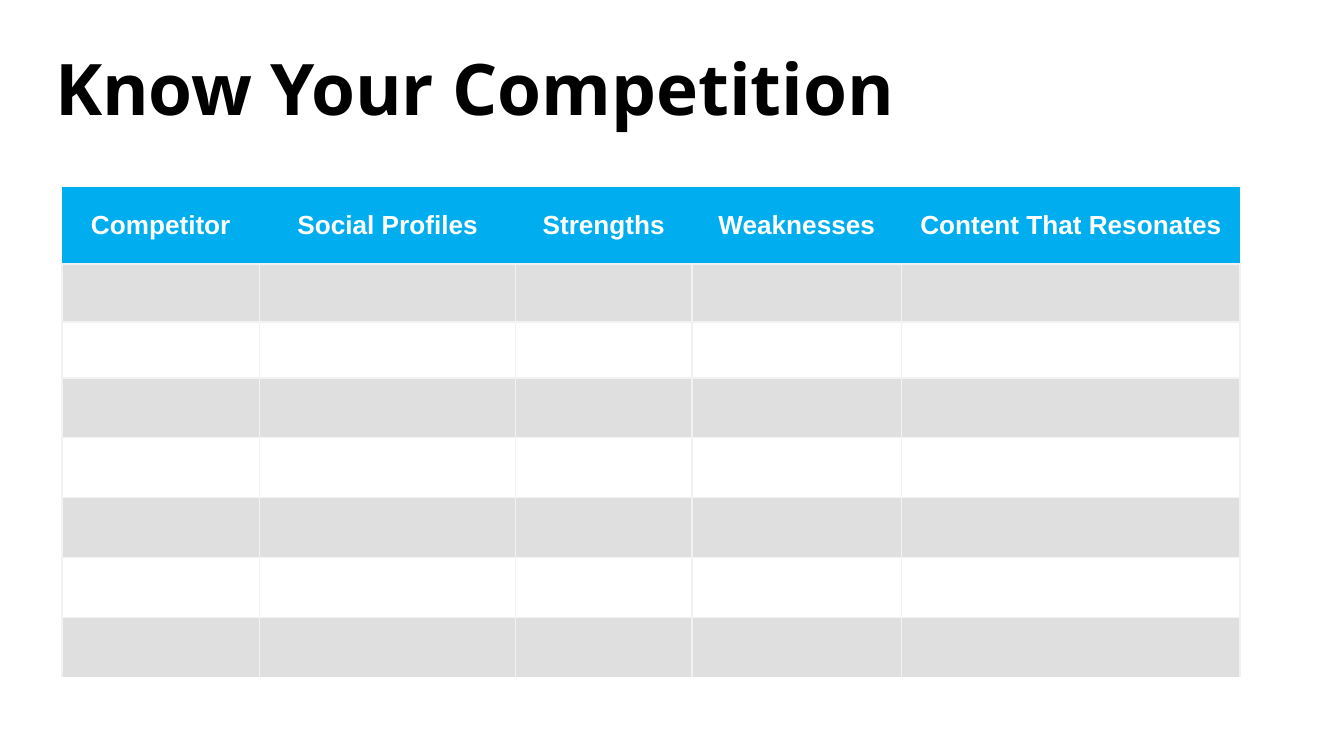
from lxml import etree
from pptx import Presentation
from pptx.dml.color import RGBColor
from pptx.enum.text import MSO_ANCHOR, PP_ALIGN
from pptx.oxml.ns import qn
from pptx.util import Pt

MIDDLE = MSO_ANCHOR.MIDDLE
LEFT = PP_ALIGN.LEFT
CENTER = PP_ALIGN.CENTER

HEADERS = ["Competitor", "Social Profiles", "Strengths", "Weaknesses", "Content That Resonates"]
COLUMN_WIDTHS = [105.9, 137.2, 94.4, 112.4, 181.4]
ROW_HEIGHTS = [41.2, 31, 30] + [32.1] * 5
BLUE, GRAY, WHITE, BORDER = "00AEEF", "DFDFDF", "FFFFFF", "F2F2F2"


def color(value):
    return RGBColor.from_string(value)


def write(frame, text, font="Arial", size=14, fill=WHITE, align=CENTER, spacing=None):
    para = frame.paragraphs[0]
    para.alignment = align
    para.line_spacing = spacing
    span = para.add_run()
    span.text = text
    span.font.name = font
    span.font.size = Pt(size)
    span.font.bold = True
    span.font.color.rgb = color(fill)


deck = Presentation()
deck.slide_width = Pt(720)
deck.slide_height = Pt(405)
page = deck.slides.add_slide(deck.slide_layouts[6])

title = page.shapes.add_textbox(Pt(29.5), Pt(26), Pt(664.5), Pt(47))
frame = title.text_frame
frame.word_wrap = True
frame.vertical_anchor = MIDDLE
frame.margin_left = frame.margin_right = frame.margin_top = frame.margin_bottom = 0
write(frame, "Know Your Competition", font="Open Sans", size=38.1, fill="000000", align=LEFT, spacing=0.9)

table = page.shapes.add_table(
    len(ROW_HEIGHTS), len(HEADERS), Pt(33.2), Pt(100.2), Pt(sum(COLUMN_WIDTHS)), Pt(sum(ROW_HEIGHTS))
).table
table.first_row = False
table.horz_banding = False
for column, width in zip(table.columns, COLUMN_WIDTHS):
    column.width = Pt(width)

last_row = len(ROW_HEIGHTS) - 1
for row_index, height in enumerate(ROW_HEIGHTS):
    row = table.rows[row_index]
    row.height = Pt(height)
    sides = {0: "B", last_row: "LRT"}.get(row_index, "LRTB")
    row_fill = BLUE if row_index == 0 else GRAY if row_index % 2 else WHITE
    for column_index, cell in enumerate(row.cells):
        cell.margin_left = cell.margin_right = cell.margin_top = cell.margin_bottom = Pt(3.6)
        cell.vertical_anchor = MIDDLE
        if row_index == 0:
            write(cell.text_frame, HEADERS[column_index])
        properties = cell._tc.get_or_add_tcPr()
        for side in "LRTB":
            line = etree.SubElement(properties, qn("a:ln" + side), w=str(Pt(1)))
            if side in sides:
                solid = etree.SubElement(line, qn("a:solidFill"))
                etree.SubElement(solid, qn("a:srgbClr"), val=BORDER)
            else:
                etree.SubElement(line, qn("a:noFill"))
        cell.fill.solid()
        cell.fill.fore_color.rgb = color(row_fill)

deck.save("out.pptx")
